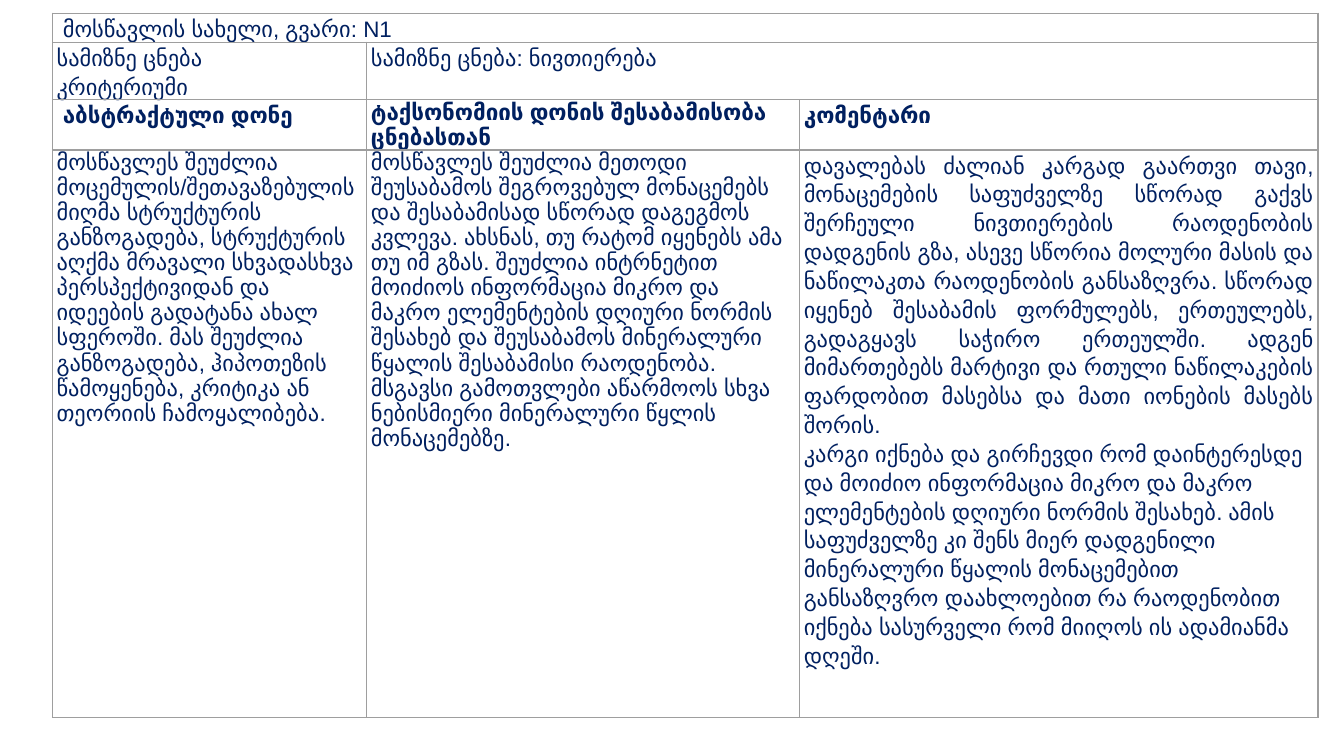
from lxml.etree import SubElement
from pptx import Presentation
from pptx.dml.color import RGBColor
from pptx.enum.text import MSO_ANCHOR, PP_ALIGN
from pptx.oxml.ns import qn
from pptx.util import Cm, Pt

COLORS = {"text": "002060", "border": "9E9E9E"}
COLUMNS = [5.94, 8.18, 9.8]
ROWS = [0.41, 0.97, 0.46, 10.72]

# Cell text: (row, column) -> paragraphs
CELLS = {
    (0, 0): ["მოსწავლის სახელი, გვარი: N1"],
    (1, 0): ["სამიზნე ცნება", "კრიტერიუმი"],
    (1, 1): ["სამიზნე ცნება: ნივთიერება"],
    (2, 0): ["აბსტრაქტული დონე"],
    (2, 1): ["ტაქსონომიის დონის შესაბამისობა ცნებასთან"],
    (2, 2): ["კომენტარი"],
    (3, 0): [
        "მოსწავლეს შეუძლია მოცემულის/შეთავაზებულის მიღმა სტრუქტურის "
        "განზოგადება, სტრუქტურის აღქმა მრავალი სხვადასხვა პერსპექტივიდან და "
        "იდეების გადატანა ახალ სფეროში. მას შეუძლია განზოგადება, ჰიპოთეზის "
        "წამოყენება, კრიტიკა ან თეორიის ჩამოყალიბება."
    ],
    (3, 1): [
        "მოსწავლეს შეუძლია მეთოდი შეუსაბამოს შეგროვებულ მონაცემებს და "
        "შესაბამისად სწორად დაგეგმოს კვლევა. ახსნას, თუ რატომ იყენებს ამა თუ "
        "იმ გზას. შეუძლია ინტრნეტით მოიძიოს ინფორმაცია მიკრო და მაკრო "
        "ელემენტების დღიური ნორმის შესახებ და შეუსაბამოს მინერალური წყალის "
        "შესაბამისი რაოდენობა. მსგავსი გამოთვლები აწარმოოს სხვა ნებისმიერი "
        "მინერალური წყლის მონაცემებზე."
    ],
    (3, 2): [
        "დავალებას ძალიან კარგად გაართვი თავი, მონაცემების საფუძველზე სწორად "
        "გაქვს შერჩეული ნივთიერების რაოდენობის დადგენის გზა, ასევე სწორია "
        "მოლური მასის და ნაწილაკთა რაოდენობის განსაზღვრა. სწორად იყენებ "
        "შესაბამის ფორმულებს, ერთეულებს, გადაგყავს საჭირო ერთეულში. ადგენ "
        "მიმართებებს მარტივი და რთული ნაწილაკების ფარდობით მასებსა და მათი "
        "იონების მასებს შორის.",
        "კარგი იქნება და გირჩევდი რომ დაინტერესდე და მოიძიო ინფორმაცია მიკრო "
        "და მაკრო ელემენტების დღიური ნორმის შესახებ. ამის საფუძველზე კი შენს "
        "მიერ დადგენილი მინერალური წყალის მონაცემებით განსაზღვრო დაახლოებით "
        "რა რაოდენობით იქნება სასურველი რომ მიიღოს ის ადამიანმა დღეში.",
    ],
}
HEADER_ROW = 2
INDENTED = {(0, 0), (2, 0)}
SINGLE_SPACED = {(2, 1), (3, 0), (3, 1)}


def set_borders(cell):
    tcPr = cell._tc.get_or_add_tcPr()
    for side in ("a:lnL", "a:lnR", "a:lnT", "a:lnB"):
        ln = SubElement(tcPr, qn(side), w=str(Pt(0.75)))
        fill = SubElement(ln, qn("a:solidFill"))
        SubElement(fill, qn("a:srgbClr"), val=COLORS["border"])


prs = Presentation()
prs.slide_width, prs.slide_height = Cm(25.4), Cm(14.29)
s = prs.slides.add_slide(prs.slide_layouts[6])

# Table grid
frame = s.shapes.add_table(len(ROWS), len(COLUMNS), Cm(0.99), Cm(0.25),
                           Cm(sum(COLUMNS)), Cm(sum(ROWS)))
table = frame.table
table.first_row = False
table.horz_banding = False
for column, width in zip(table.columns, COLUMNS):
    column.width = Cm(width)
for row, height in zip(table.rows, ROWS):
    row.height = Cm(height)

# Cell frames
for cell in table.iter_cells():
    set_borders(cell)
    cell.fill.background()
    cell.margin_left = cell.margin_right = Cm(0.08)
    cell.margin_top = cell.margin_bottom = Cm(0)
    cell.vertical_anchor = MSO_ANCHOR.TOP
    # Keeps empty merged cells from stretching their rows
    cell.text_frame.paragraphs[0].font.size = Pt(12)
table.cell(0, 0).merge(table.cell(0, 2))
table.cell(1, 1).merge(table.cell(1, 2))

# Cell text
for (row, col), paragraphs in CELLS.items():
    cell = table.cell(row, col)
    if (row, col) in INDENTED:
        cell.margin_left = Cm(0.2)
    tf = cell.text_frame
    for i, text in enumerate(paragraphs):
        p = tf.paragraphs[0] if i == 0 else tf.add_paragraph()
        p.line_spacing = 1.0 if (row, col) in SINGLE_SPACED else 1.15
        r = p.add_run()
        r.text = text
        r.font.name = "Arial"
        r.font.size = Pt(12)
        r.font.bold = row == HEADER_ROW
        r.font.color.rgb = RGBColor.from_string(COLORS["text"])

# The first comment paragraph is justified
table.cell(3, 2).text_frame.paragraphs[0].alignment = PP_ALIGN.JUSTIFY

prs.save("out.pptx")
